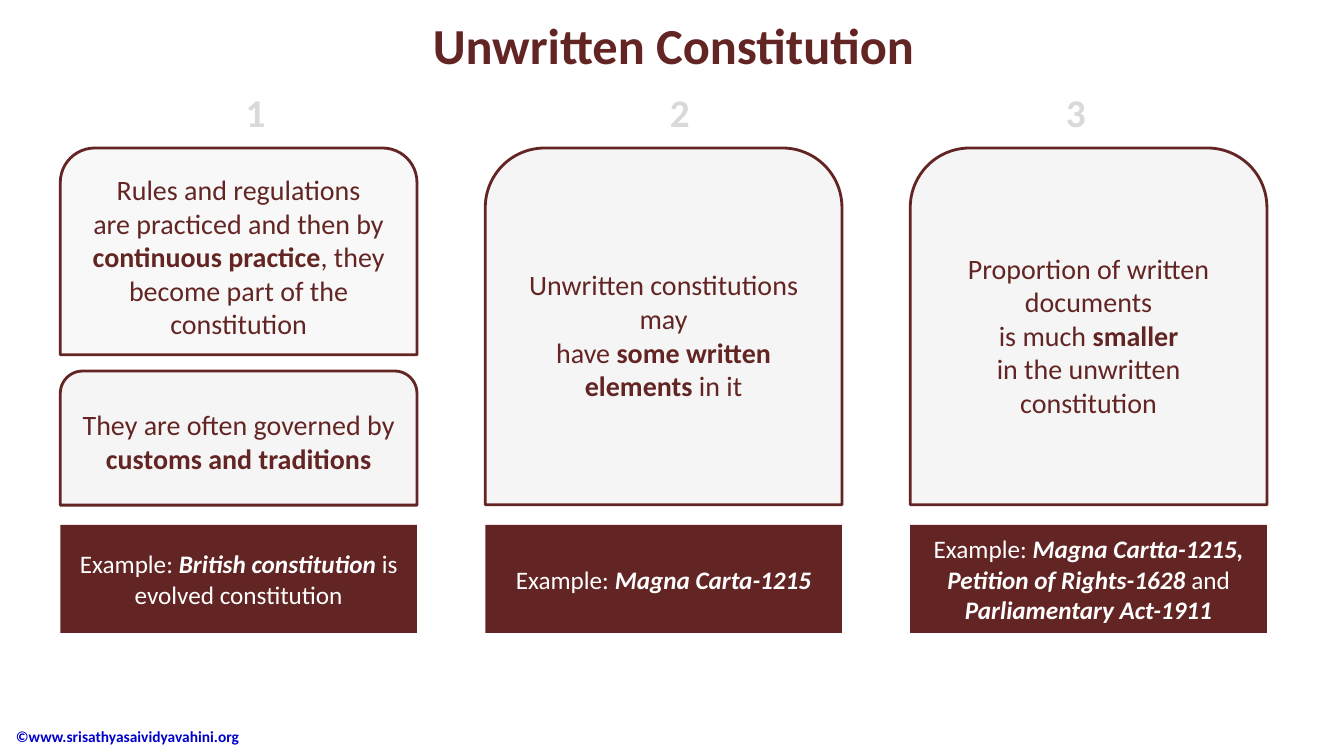
from dataclasses import dataclass

from lxml.etree import SubElement
from pptx import Presentation
from pptx.dml.color import RGBColor
from pptx.enum.shapes import MSO_SHAPE
from pptx.enum.text import MSO_ANCHOR, MSO_AUTO_SIZE, PP_ALIGN
from pptx.oxml.ns import qn
from pptx.util import Cm, Pt

COLORS = {
    "maroon": "632523",
    "card": "F2F2F2",
    "number": "D9D9D9",
    "white": "FFFFFF",
    "link": "0000CC",
}
FONT = "Calibri"

# Column grid in centimetres
FIRST_LEFT, COLUMN_STEP, COLUMN_WIDTH = 1.52, 10.71, 8.99
CARD_TOP, EXAMPLE_TOP, EXAMPLE_HEIGHT = 3.73, 13.23, 2.72
NUMBER_TOP, NUMBER_WIDTH, NUMBER_HEIGHT = 2.11, 1.8, 1.45

# A run is (text, style), where style holds "b" for bold and "i" for italic
Paragraphs = list[list[tuple[str, str]]]


@dataclass
class Card:
    top: float
    height: float
    opacity: int
    paragraphs: Paragraphs


@dataclass
class Column:
    number_left: float
    cards: list[Card]
    example: Paragraphs


COLUMNS = [
    Column(
        5.54,
        [
            Card(CARD_TOP, 5.21, 51, [
                [("Rules and regulations", "")],
                [("are practiced and then by ", ""), ("continuous practice", "b"),
                 (", they become part of the constitution", "")],
            ]),
            Card(9.35, 3.38, 76, [
                [("They are often governed by ", ""), ("customs and traditions", "b")],
            ]),
        ],
        [[("Example: ", ""), ("British constitution ", "bi"),
          ("is evolved constitution", "")]],
    ),
    Column(
        16.23,
        [
            Card(CARD_TOP, 8.99, 76, [
                [("Unwritten constitutions may", "")],
                [("have ", ""), ("some written elements ", "b"), ("in it", "")],
            ]),
        ],
        [[("Example: ", ""), ("Magna Carta-1215", "bi")]],
    ),
    Column(
        26.21,
        [
            Card(CARD_TOP, 8.99, 76, [
                [("Proportion of written documents", "")],
                [("is much ", ""), ("smaller", "b")],
                [("in the unwritten constitution", "")],
            ]),
        ],
        [[("Example: ", ""), ("Magna Cartta-1215, Petition of Rights-1628 ", "bi"),
          ("and ", ""), ("Parliamentary Act-1911", "bi")]],
    ),
]


def color(name: str) -> RGBColor:
    return RGBColor.from_string(COLORS[name])


def write_text(shape, paragraphs: Paragraphs, *, size: float, font_color: str,
               align=PP_ALIGN.CENTER, anchor=MSO_ANCHOR.MIDDLE) -> None:
    frame = shape.text_frame
    frame.word_wrap = True
    frame.auto_size = MSO_AUTO_SIZE.NONE
    frame.vertical_anchor = anchor
    for index, runs in enumerate(paragraphs):
        paragraph = frame.add_paragraph() if index else frame.paragraphs[0]
        paragraph.alignment = align
        for text, style in runs:
            run = paragraph.add_run()
            run.text = text
            run.font.name = FONT
            run.font.size = Pt(size)
            run.font.bold = "b" in style
            run.font.italic = "i" in style
            run.font.color.rgb = color(font_color)


def add_box(slide, kind, left: float, top: float, height: float, fill: str):
    shape = slide.shapes.add_shape(
        kind, Cm(left), Cm(top), Cm(COLUMN_WIDTH), Cm(height))
    shape.shadow.inherit = False
    shape.fill.solid()
    shape.fill.fore_color.rgb = color(fill)
    shape.line.fill.background()
    return shape


def add_card(slide, left: float, card: Card) -> None:
    shape = add_box(slide, MSO_SHAPE.ROUND_2_SAME_RECTANGLE,
                    left, card.top, card.height, "card")
    fill_color = shape.fill._xPr.find(qn("a:solidFill"))[0]
    SubElement(fill_color, qn("a:alpha"), val=str(card.opacity * 1000))
    shape.line.color.rgb = color("maroon")
    shape.line.width = Pt(2)
    write_text(shape, card.paragraphs, size=20, font_color="maroon")


def add_column(slide, index: int, column: Column) -> None:
    left = FIRST_LEFT + index * COLUMN_STEP
    number = slide.shapes.add_textbox(
        Cm(column.number_left), Cm(NUMBER_TOP), Cm(NUMBER_WIDTH), Cm(NUMBER_HEIGHT))
    write_text(number, [[(str(index + 1), "b")]], size=28, font_color="number",
               anchor=MSO_ANCHOR.TOP)
    for card in column.cards:
        add_card(slide, left, card)
    example = add_box(slide, MSO_SHAPE.RECTANGLE,
                      left, EXAMPLE_TOP, EXAMPLE_HEIGHT, "maroon")
    write_text(example, column.example, size=18, font_color="white")


def main() -> None:
    presentation = Presentation()
    presentation.slide_width, presentation.slide_height = Cm(33.87), Cm(19.05)
    slide = presentation.slides.add_slide(presentation.slide_layouts[5])

    # Title
    title = slide.shapes.title
    title.left, title.top, title.width, title.height = (
        Cm(4.06), Cm(0.2), Cm(25.83), Cm(1.83))
    write_text(title, [[("Unwritten Constitution", "b")]], size=36, font_color="maroon")

    # Numbered columns with their examples
    for index, column in enumerate(COLUMNS):
        add_column(slide, index, column)

    # Copyright line
    footer = slide.shapes.add_textbox(Cm(0.15), Cm(18.03), Cm(8.97), Cm(1.04))
    write_text(footer, [[("©www.srisathyasaividyavahini.org", "b")]],
               size=11, font_color="link", align=PP_ALIGN.LEFT)

    presentation.save("out.pptx")


if __name__ == "__main__":
    main()
